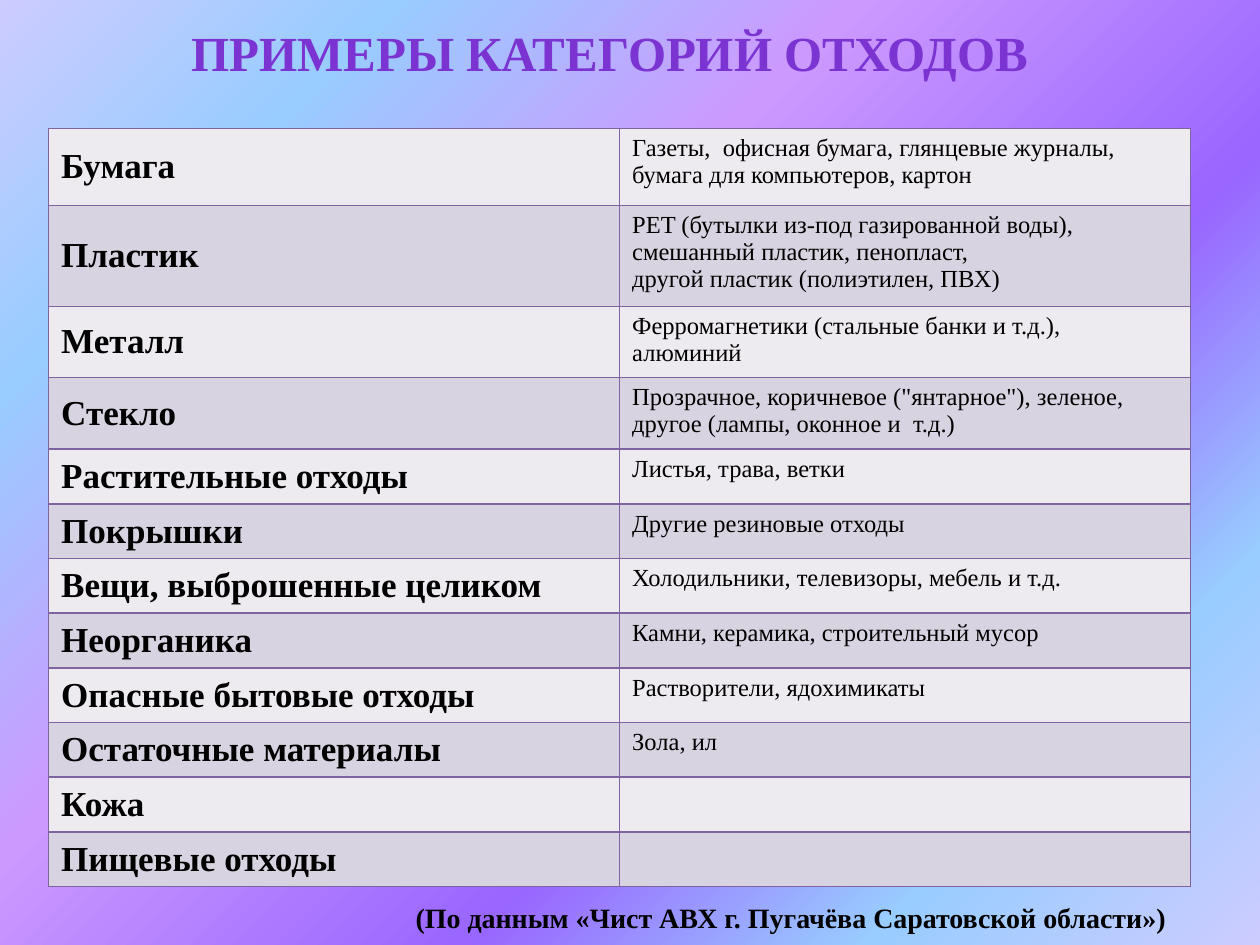
import copy
from dataclasses import dataclass

import pptx
import pptx.dml.color
import pptx.enum.text
import pptx.oxml
import pptx.oxml.ns
import pptx.util

Cm = pptx.util.Cm
Pt = pptx.util.Pt
qn = pptx.oxml.ns.qn
ANCHOR = pptx.enum.text.MSO_ANCHOR
ALIGN = pptx.enum.text.PP_ALIGN

FONT = "Times New Roman"
BLACK = "000000"
BORDER = "8064A2"
BANDS = ("EDEAF0", "D8D3E0")
BACKGROUND_STOPS = [(0, "CCCCFF"), (18, "99CCFF"), (36, "9966FF"),
                    (61, "CC99FF"), (82, "99CCFF"), (100, "CCCCFF")]
TITLE_STOPS = [(0, "3D1B67"), (43, "7B34D2"), (48, "7330C4"), (100, "3D1B67")]
CATEGORY_FORMAT = {"size": Pt(20), "bold": True, "name": FONT}
EXAMPLE_FORMAT = {"size": Pt(14), "bold": False, "name": FONT}
TITLE_FORMAT = {"size": Pt(28), "bold": True, "name": FONT}
CREDIT_FORMAT = {"size": Pt(16), "bold": True, "name": FONT}


@dataclass
class Waste:
    category: str
    examples: str = ""
    height: float = 1.1


WASTES = [
    Waste("Бумага", "Газеты,  офисная бумага, глянцевые журналы,\n"
          "бумага для компьютеров, картон", 1.55),
    Waste("Пластик", "PET (бутылки из-под газированной воды),\n"
          "смешанный пластик, пенопласт,\n"
          "другой пластик (полиэтилен, ПВХ)", 2.03),
    Waste("Металл", "Ферромагнетики (стальные банки и т.д.),\nалюминий", 1.44),
    Waste("Стекло", 'Прозрачное, коричневое ("янтарное"), зеленое,\n'
          "другое (лампы, оконное и  т.д.)", 1.44),
    Waste("Растительные отходы", "Листья, трава, ветки"),
    Waste("Покрышки", "Другие резиновые отходы"),
    Waste("Вещи, выброшенные целиком", "Холодильники, телевизоры, мебель и т.д."),
    Waste("Неорганика", "Камни, керамика, строительный мусор"),
    Waste("Опасные бытовые отходы", "Растворители, ядохимикаты"),
    Waste("Остаточные материалы", "Зола, ил"),
    Waste("Кожа"),
    Waste("Пищевые отходы"),
]


def color(value: str) -> pptx.dml.color.RGBColor:
    return pptx.dml.color.RGBColor.from_string(value)


def xml(text: str):
    """Parse a fragment that uses the a: and p: prefixes."""
    head, mark, tail = text.partition(">")
    return pptx.oxml.parse_xml(f"{head} {pptx.oxml.ns.nsdecls('a', 'p')}{mark}{tail}")


def gradient(stops: list[tuple[int, str]], direction: str) -> str:
    marks = "".join(f'<a:gs pos="{position * 1000}"><a:srgbClr val="{value}"/></a:gs>'
                    for position, value in stops)
    return f'<a:gradFill rotWithShape="1"><a:gsLst>{marks}</a:gsLst>{direction}</a:gradFill>'


def paint_background(slide) -> None:
    corner = ('<a:path path="circle"><a:fillToRect l="100000" t="100000"/></a:path>')
    fill = gradient(BACKGROUND_STOPS, corner)
    slide.element.cSld.insert(0, xml(f"<p:bg><p:bgPr>{fill}<a:effectLst/></p:bgPr></p:bg>"))


def write(frame, text: str, font_format: dict) -> None:
    """Fill the first paragraph, giving line breaks the same format as the runs."""
    paragraph = frame.paragraphs[0]
    paragraph.text = text
    for run in paragraph.runs:
        for attribute, value in font_format.items():
            setattr(run.font, attribute, value)
        run.font.color.rgb = color(BLACK)
    for line_break in paragraph._p.findall(qn("a:br")):
        line_break.append(copy.deepcopy(paragraph.runs[0]._r.rPr))


def draw_border(cell) -> None:
    properties = cell._tc.get_or_add_tcPr()
    for index, side in enumerate(("lnL", "lnR", "lnT", "lnB")):
        properties.insert(index, xml(
            f'<a:{side} w="12700"><a:solidFill><a:srgbClr val="{BORDER}"/>'
            f"</a:solidFill></a:{side}>"))


def add_title(slide) -> None:
    title = slide.shapes.add_textbox(Cm(2.97), Cm(0.3), Cm(18.64), Cm(1.96))
    frame = title.text_frame
    layout = {"word_wrap": True, "vertical_anchor": ANCHOR.MIDDLE, "margin_bottom": Cm(0.61)}
    for attribute, value in layout.items():
        setattr(frame, attribute, value)
    write(frame, "ПРИМЕРЫ КАТЕГОРИЙ ОТХОДОВ", TITLE_FORMAT)
    heading = frame.paragraphs[0]
    heading.alignment = ALIGN.CENTER
    properties = heading.runs[0]._r.rPr
    properties.remove(properties.find(qn("a:solidFill")))
    properties.insert(0, xml('<a:ln w="9000"><a:solidFill><a:srgbClr val="5E457C"/>'
                             "</a:solidFill></a:ln>"))
    properties.insert(1, xml(gradient(TITLE_STOPS, '<a:lin ang="5400000" scaled="0"/>')))


def add_waste_table(slide) -> None:
    height = Cm(sum(waste.height for waste in WASTES))
    table = slide.shapes.add_table(len(WASTES), 2, Cm(0.98), Cm(2.59), Cm(23.02), height).table
    table.first_row = False
    for index, waste in enumerate(WASTES):
        table.rows[index].height = Cm(waste.height)
        category, examples = table.rows[index].cells
        for cell in (category, examples):
            cell.fill.solid()
            cell.fill.fore_color.rgb = color(BANDS[index % 2])
            draw_border(cell)
        category.vertical_anchor = ANCHOR.MIDDLE
        write(category.text_frame, waste.category, CATEGORY_FORMAT)
        if waste.examples:
            write(examples.text_frame, waste.examples, EXAMPLE_FORMAT)


def add_credit(slide) -> None:
    credit = slide.shapes.add_textbox(Cm(8.13), Cm(18.03), Cm(15.85), Cm(0.94))
    credit.text_frame.word_wrap = False
    write(credit.text_frame, "(По данным «Чист АВХ г. Пугачёва Саратовской области»)",
          CREDIT_FORMAT)


def main() -> None:
    deck = pptx.Presentation()
    deck.slide_width, deck.slide_height = Cm(25.4), Cm(19.05)
    slide = deck.slides.add_slide(deck.slide_layouts[6])
    paint_background(slide)
    add_title(slide)
    add_waste_table(slide)
    add_credit(slide)
    deck.save("out.pptx")


if __name__ == "__main__":
    main()
